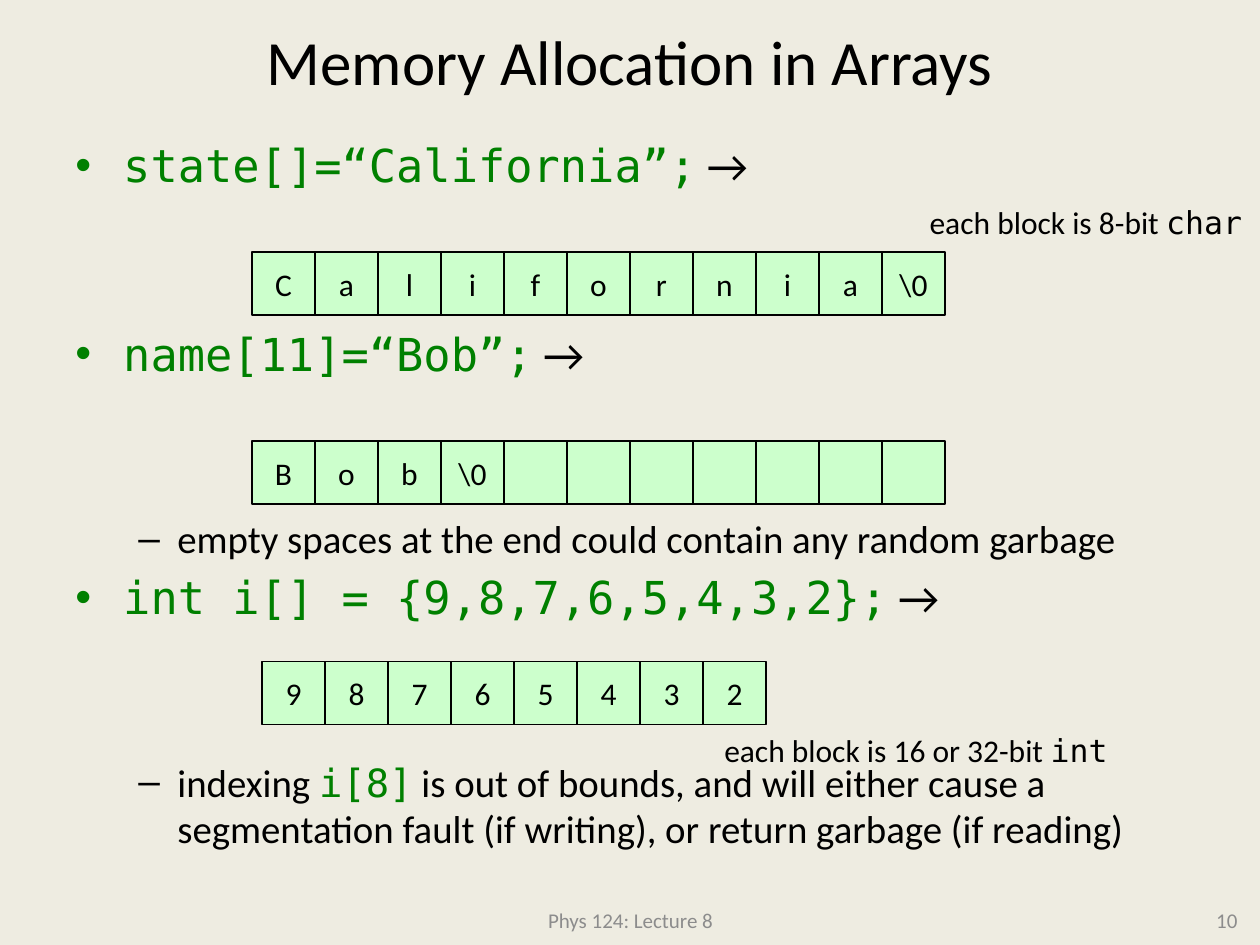
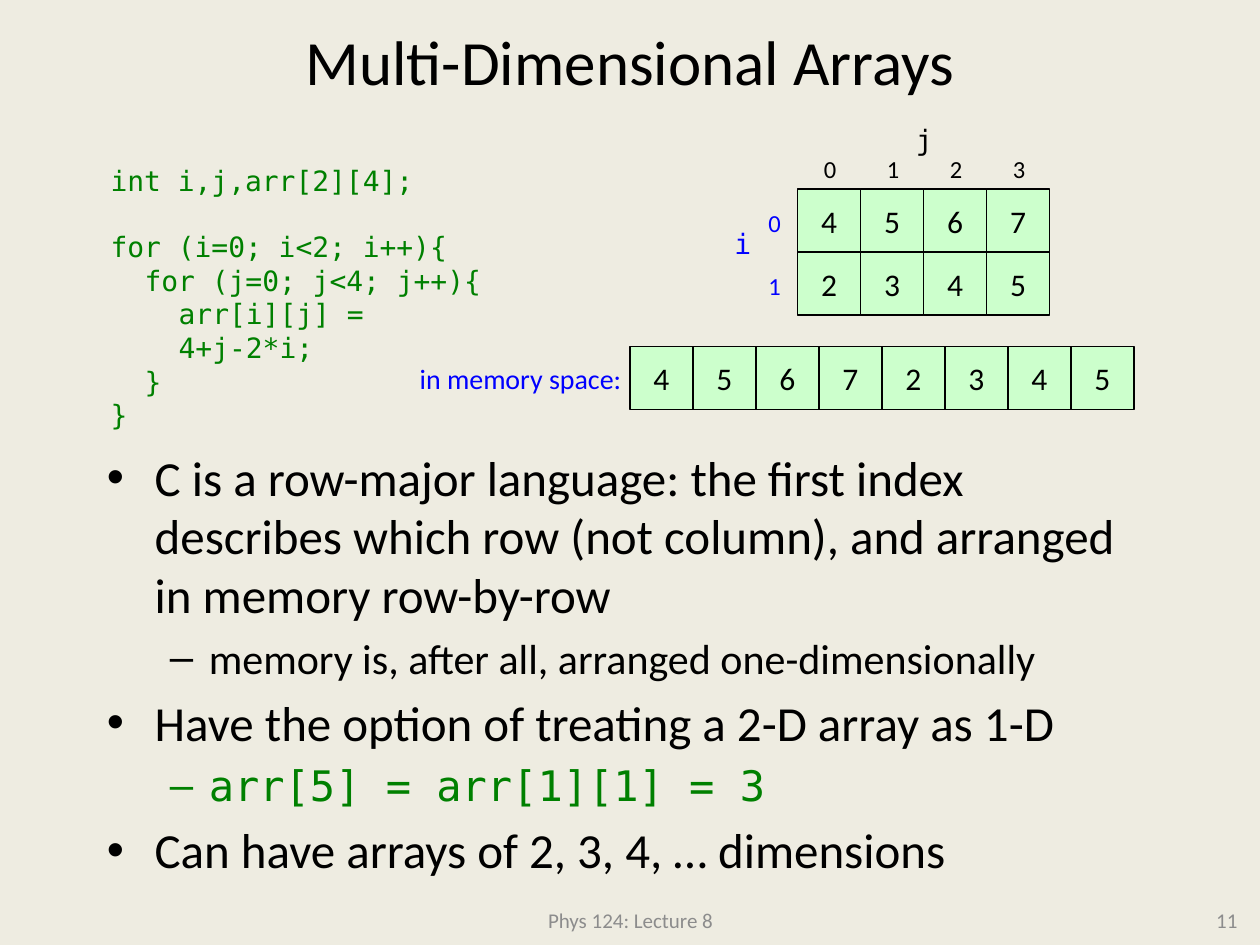
"""Build two lecture slides on how C arrays are laid out in memory."""
from lxml.etree import SubElement
from pptx import Presentation
from pptx.dml.color import RGBColor
from pptx.enum.shapes import MSO_SHAPE as Shape
from pptx.enum.text import MSO_ANCHOR as Anchor, MSO_AUTO_SIZE as AutoSize, PP_ALIGN as Align
from pptx.oxml.ns import qn
from pptx.util import Inches, Pt

SAND = RGBColor(0xEE, 0xEC, 0xE1)
MINT = RGBColor(0xCC, 0xFF, 0xCC)
GREEN = RGBColor(0x00, 0x80, 0x00)
BLUE = RGBColor(0x00, 0x00, 0xFF)
BLACK = RGBColor(0x00, 0x00, 0x00)
GRAY = RGBColor(0x8C, 0x8C, 0x8C)
SANS, MONO = "Calibri", "DejaVu Sans Mono"

FOOTER = "Phys 124: Lecture 8"
CELL = 0.5
CODE_STEP = 0.27
BLOCK_GAP = 76.7
BULLETS = [("•", 0.38, 0.38), ("–", 0.81, 0.31)]

CODE = {"font": MONO, "color": GREEN}
ARROW = (" →", {})

ALLOCATION_POINTS = [
    (0, 0, [("state[]=“California”;", CODE), ARROW]),
    (0, BLOCK_GAP, [("name[11]=“Bob”;", CODE), ARROW]),
    (1, BLOCK_GAP, [("empty spaces at the end could contain any random garbage", {})]),
    (0, 4.8, [("int i[] = {9,8,7,6,5,4,3,2};", CODE), ARROW]),
    (1, BLOCK_GAP, [
        ("indexing ", {}),
        ("i[8]", CODE),
        (" is out of bounds, and will either cause a segmentation fault "
         "(if writing), or return garbage (if reading)", {}),
    ]),
]
ALLOCATION_ARRAYS = [
    (2, 2, [[*"California", "\\0"]]),
    (2, 3.5, [[*"Bob", "\\0"] + [""] * 7]),
    (2.08, 5.25, ["98765432"]),
]
BLOCK_NOTES = [
    (7.28, 1.56, 2.7, "each block is 8-bit ", "char"),
    (5.65, 5.75, 3.27, "each block is 16 or 32-bit ", "int"),
]

DIMENSION_POINTS = [
    (0, 0, [("C is a row-major language: the first index describes which row "
             "(not column), and arranged in memory row-by-row", {})]),
    (1, 4.8, [("memory is, after all, arranged one-dimensionally", {})]),
    (0, 5.6, [("Have the option of treating a 2-D array as 1-D", {})]),
    (1, 4.8, [("arr[5] = arr[1][1] = 3", CODE)]),
    (0, 5.6, [("Can have arrays of 2, 3, 4, … dimensions", {})]),
]
CODE_LINES = [
    (0, 0, "int i,j,arr[2][4];"),
    (0, 18.6, "for (i=0; i<2; i++){"),
    (1, 0, "for (j=0; j<4; j++){"),
    (2, 0, "arr[i][j] = 4+j-2*i;"),
    (1, 0, "}"),
    (0, 0, "}"),
]
MATRIX = ["4567", "2345"]
MATRIX_LEFT, MATRIX_TOP = 6.33, 1.5


def write(para, text, size=18, font=SANS, color=BLACK):
    """Append one formatted span to a paragraph."""
    span = para.add_run()
    span.text = text
    span.font.size = Pt(size)
    span.font.name = font
    span.font.color.rgb = color


def add_box(page, left, top, width, height, wrap=True, anchor=Anchor.TOP):
    """Add an empty text box and return its frame."""
    box = page.shapes.add_textbox(*map(Inches, (left, top, width, height)))
    frame = box.text_frame
    frame.word_wrap = wrap
    frame.auto_size = AutoSize.NONE if wrap else AutoSize.SHAPE_TO_FIT_TEXT
    frame.vertical_anchor = anchor
    return frame


def add_label(page, area, text, align=Align.LEFT, wrap=False, anchor=Anchor.TOP, **style):
    """Add a one-line text box and return its paragraph."""
    para = add_box(page, *area, wrap=wrap, anchor=anchor).paragraphs[0]
    para.alignment = align
    write(para, text, **style)
    return para


def stack_paragraphs(frame, count):
    """Return the given number of paragraphs of an empty frame."""
    return [frame.paragraphs[0]] + [frame.add_paragraph() for _ in range(count - 1)]


def add_points(page, area, points, sizes):
    """Add the bulleted body text."""
    frame = add_box(page, *area)
    for para, (level, before, spans) in zip(stack_paragraphs(frame, len(points)), points):
        mark, margin, hang = BULLETS[level]
        para.level = level
        para.space_before = Pt(before)
        settings = para._p.get_or_add_pPr()
        settings.set("marL", str(Inches(margin)))
        settings.set("indent", str(-Inches(hang)))
        SubElement(settings, qn("a:buFont"), typeface="Arial")
        SubElement(settings, qn("a:buChar"), char=mark)
        for text, style in spans:
            write(para, text, size=sizes[level], **style)


def add_cells(page, left, top, rows):
    """Draw rows of adjoining memory cells."""
    for i, row in enumerate(rows):
        for j, value in enumerate(row):
            cell = page.shapes.add_shape(
                Shape.RECTANGLE, Inches(left + j * CELL), Inches(top + i * CELL),
                Inches(CELL), Inches(CELL))
            cell.shadow.inherit = False
            cell.fill.solid()
            cell.fill.fore_color.rgb = MINT
            cell.line.color.rgb = BLACK
            cell.line.width = Pt(0.75)
            if value:
                frame = cell.text_frame
                frame.word_wrap = False
                frame.vertical_anchor = Anchor.MIDDLE
                frame.paragraphs[0].alignment = Align.CENTER
                write(frame.paragraphs[0], value)


def add_page(deck, title, number):
    """Add a slide with background, title and footer."""
    page = deck.slides.add_slide(deck.slide_layouts[6])
    page.background.fill.solid()
    page.background.fill.fore_color.rgb = SAND
    for area, text, align, size, color in [
        ((3.42, 7.1, 3.17, 0.4), FOOTER, Align.CENTER, 12, GRAY),
        ((7.59, 7.1, 2.33, 0.4), str(number), Align.RIGHT, 12, GRAY),
        ((0.5, 0.08, 9, 0.8), title, Align.CENTER, 36, BLACK),
    ]:
        add_label(page, area, text, align=align, wrap=True, anchor=Anchor.MIDDLE,
                  size=size, color=color)
    return page


def build_allocation(deck):
    """Build the slide on one-dimensional arrays."""
    page = add_page(deck, "Memory Allocation in Arrays", 10)
    add_points(page, (0.5, 1.04, 9, 6.05), ALLOCATION_POINTS, (25.9, 22.2))
    for left, top, rows in ALLOCATION_ARRAYS:
        add_cells(page, left, top, rows)
    for left, top, width, text, kind in BLOCK_NOTES:
        write(add_label(page, (left, top, width, 0.4), text), kind, font=MONO)


def build_dimensions(deck):
    """Build the slide on two-dimensional arrays."""
    page = add_page(deck, "Multi-Dimensional Arrays", 11)
    add_points(page, (0.75, 3.5, 8.5, 3.33), DIMENSION_POINTS, (28, 24))
    frame = add_box(page, 0.78, 1.25, 3.4, 1.97, wrap=False)
    for para, (depth, before, text) in zip(stack_paragraphs(frame, len(CODE_LINES)), CODE_LINES):
        para._p.get_or_add_pPr().set("marL", str(Inches(depth * CODE_STEP)))
        para.space_before = Pt(before)
        write(para, text, size=16, **CODE)

    add_cells(page, 5, 2.75, ["".join(MATRIX)])
    add_cells(page, MATRIX_LEFT, MATRIX_TOP, MATRIX)
    for i in range(len(MATRIX)):
        area = (6, MATRIX_TOP + 0.1 + i * CELL, 0.31, 0.33)
        add_label(page, area, str(i), size=14, color=BLUE)
    for j in range(len(MATRIX[0])):
        area = (MATRIX_LEFT + 0.11 + j * CELL, 1.17, 0.31, 0.33)
        add_label(page, area, str(j), size=14)
    add_label(page, (5.73, 1.75, 0.34, 0.37), "i", size=16, font=MONO, color=BLUE)
    add_label(page, (7.17, 0.92, 0.34, 0.37), "j", size=16, font=MONO)
    add_label(page, (3.08, 2.82, 1.95, 0.37), "in memory space:",
              align=Align.RIGHT, size=16, color=BLUE)


def main():
    """Create and save the deck."""
    deck = Presentation()
    deck.slide_width, deck.slide_height = Inches(10), Inches(7.5)
    build_allocation(deck)
    build_dimensions(deck)
    deck.save("out.pptx")


if __name__ == "__main__":
    main()
